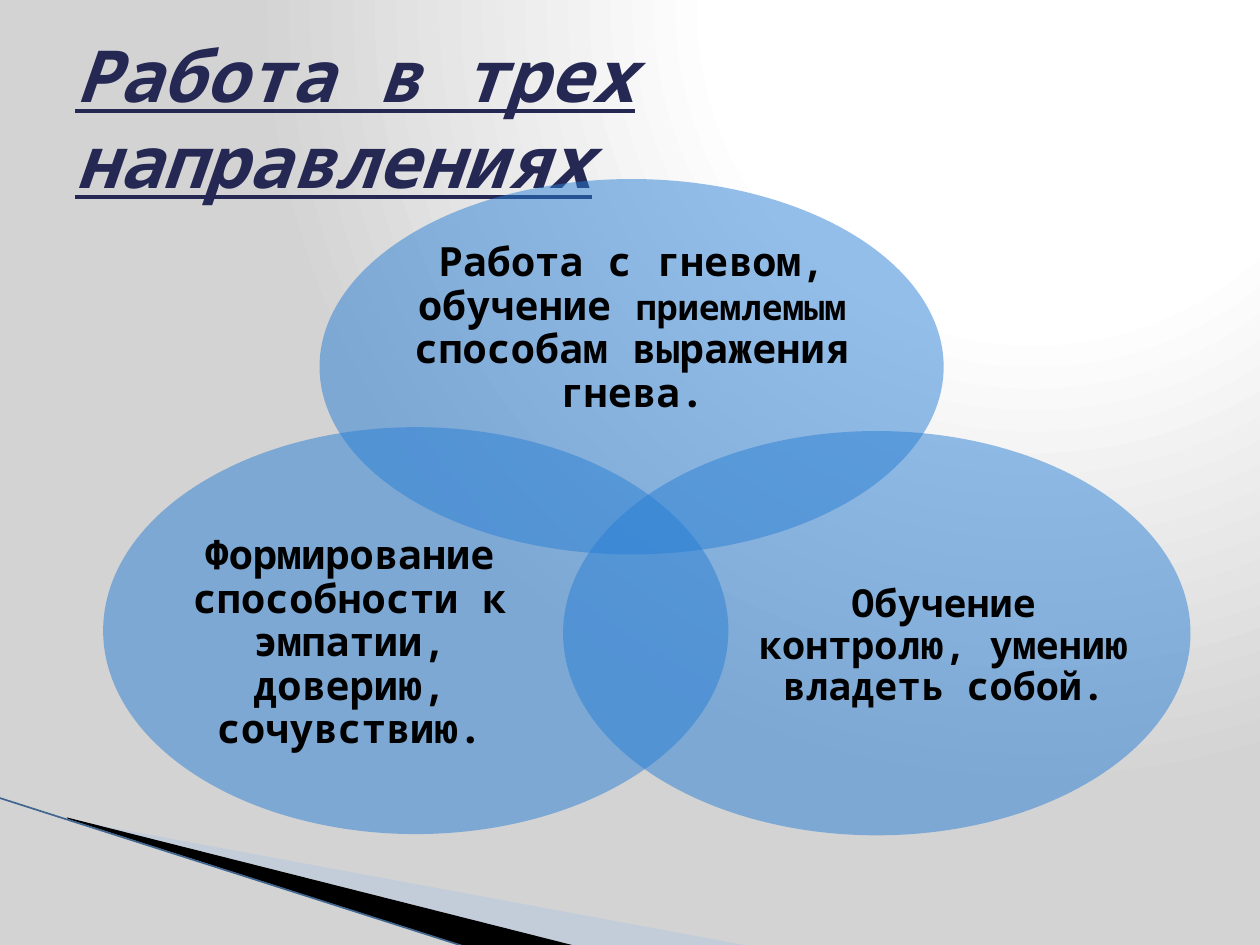
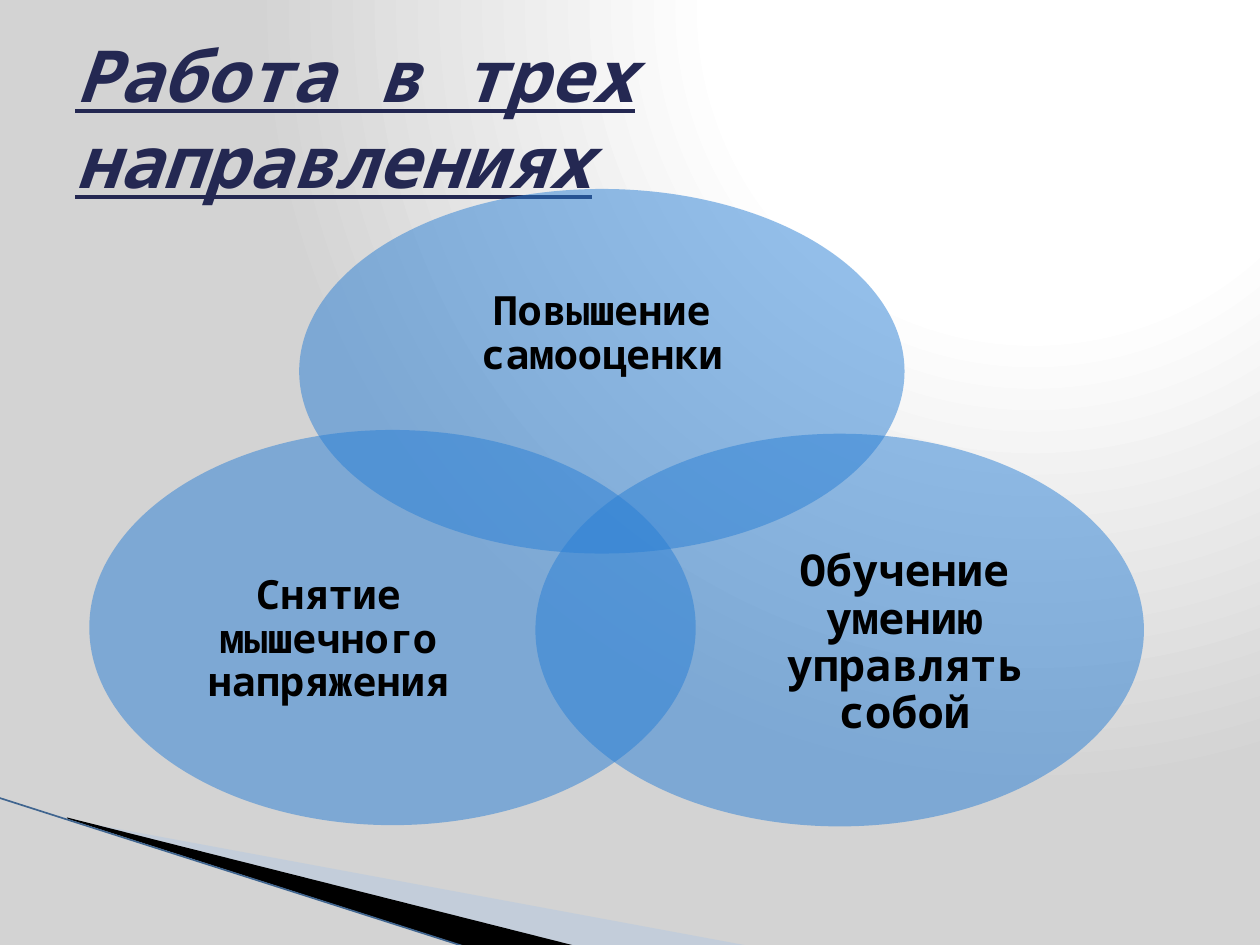
import pptx
import pptx.util
import pptx.dml.color
import pptx.enum.shapes
import pptx.enum.text
import pptx.oxml
import pptx.oxml.ns
import lxml.etree

Cm = pptx.util.Cm
FONT = "Noto Sans Mono"
COLORS = {
    "center": "FFFFFF",
    "edge": "D3D3D3",
    "title": "242852",
    "text": "000000",
    "circle": "297FD5",
    "pale_wedge": "ABC6E6",
    "dark_wedge": "000000",
    "corner_line": "40658F",
}
TITLE = "Работа в трех направлениях"
TITLE_BOX = (1.27, 0.76, 22.86, 3.18)
CORNER_ORIGIN = (-0.03, 16.08)
PALE_WEDGE = [(1.43, 0.45), (15.14, 2.99), (11.61, 2.99), (1.43, 0.43)]
DARK_WEDGE = [(1.38, 0.4), (11.64, 2.99), (9.48, 3.02), (1.4, 0.43)]
CORNER_LINE_END = (9.45, 3.02)

# Each pair is a circle and its label, in percent of the diagram box.
VENN_PARTS = [
    ((19.9, 0, 57.4, 57.2), (27.6, 10, 42.1, 25.7)),
    ((42.3, 38.4, 57.7, 61.6), (60, 54.3, 34.6, 34)),
    ((0, 37.8, 57.5, 62), (5.45, 53.7, 34.5, 34.2)),
]
SLIDES = [
    ((2.08, 3.61, 21.92, 13.23), [
        [("Работа с гневом, обучение ", 23), ("приемлемым", 20),
         (" способам выражения гнева.", 23)],
        [("Обучение контролю, умению владеть собой.", 22)],
        [("Формирование способности к эмпатии, доверию, сочувствию.", 23)],
    ]),
    ((1.8, 3.81, 21.26, 12.85), [
        [("Повышение самооценки", 23)],
        [("Обучение умению управлять собой", 25)],
        [("Снятие мышечного напряжения", 23)],
    ]),
]


def rgb(name):
    return pptx.dml.color.RGBColor.from_string(COLORS[name])


def add_child(parent, tag, **attributes):
    return lxml.etree.SubElement(parent, pptx.oxml.ns.qn(tag), **attributes)


def add_text(shapes, box, runs, color, align=None, inset=None, spacing=None,
             italic=False, underline=False):
    shape = shapes.add_textbox(*map(Cm, box))
    frame = shape.text_frame
    frame.word_wrap = True
    frame.vertical_anchor = pptx.enum.text.MSO_ANCHOR.MIDDLE
    if inset is not None:
        frame.margin_left = frame.margin_right = Cm(inset)
        frame.margin_top = frame.margin_bottom = Cm(inset)
    paragraph = frame.paragraphs[0]
    paragraph.alignment = align
    paragraph.line_spacing = spacing
    for text, size in runs:
        run = paragraph.add_run()
        run.text = text
        run.font.name = FONT
        run.font.size = pptx.util.Pt(size)
        run.font.bold = True
        run.font.italic = italic
        run.font.underline = underline
        run.font.color.rgb = rgb(color)
    return shape


def style_fill(shape, color, opacity=100):
    shape.shadow.inherit = False
    shape.fill.solid()
    shape.fill.fore_color.rgb = rgb(color)
    shape.line.fill.background()
    if opacity < 100:
        fill_color = shape.element.spPr.find(".//" + pptx.oxml.ns.qn("a:srgbClr"))
        add_child(fill_color, "a:alpha", val=str(opacity * 1000))


def paint_background(slide):
    slide.background.fill.gradient()
    gradient = slide.element.xpath(".//p:bgPr/a:gradFill")[0]
    for child in list(gradient):
        gradient.remove(child)
    stops = add_child(gradient, "a:gsLst")
    for percent, color in ((0, "center"), (40, "center"), (100, "edge")):
        stop = add_child(stops, "a:gs", pos=str(percent * 1000))
        add_child(stop, "a:srgbClr", val=COLORS[color])
    focus = add_child(gradient, "a:path", path="circle")
    add_child(focus, "a:fillToRect", l="65000", t="0", r="0", b="98000")


def add_wedge(slide, origin, points, color, opacity=100):
    left, top = origin
    corners = [(Cm(left + x), Cm(top + y)) for x, y in points]
    builder = slide.shapes.build_freeform(*corners[0])
    builder.add_line_segments(corners[1:], close=True)
    style_fill(builder.convert_to_shape(), color, opacity)


def add_corner(slide, origin):
    add_wedge(slide, origin, PALE_WEDGE, "pale_wedge", 40)
    add_wedge(slide, origin, DARK_WEDGE, "dark_wedge")
    left, top = origin
    width, height = CORNER_LINE_END
    line = slide.shapes.add_connector(
        pptx.enum.shapes.MSO_CONNECTOR.STRAIGHT,
        Cm(left), Cm(top), Cm(left + width), Cm(top + height))
    line.line.color.rgb = rgb("corner_line")
    line.line.width = pptx.util.Pt(0.95)
    add_child(line.element.spPr, "a:effectLst")


def place(box, percents):
    left, top, width, height = box
    x, y, part_width, part_height = (percent / 100 for percent in percents)
    return (left + x * width, top + y * height,
            part_width * width, part_height * height)


def add_venn(slide, box, labels):
    group = slide.shapes.add_group_shape()
    for (circle_part, label_part), runs in zip(VENN_PARTS, labels):
        circle = group.shapes.add_shape(
            pptx.enum.shapes.MSO_SHAPE.OVAL, *map(Cm, place(box, circle_part)))
        style_fill(circle, "circle", 50)
        add_text(group.shapes, place(box, label_part), runs, "text",
                 align=pptx.enum.text.PP_ALIGN.CENTER, inset=0, spacing=0.9)


def add_directions_slide(presentation, venn_box, labels):
    slide = presentation.slides.add_slide(presentation.slide_layouts[6])
    paint_background(slide)
    add_corner(slide, CORNER_ORIGIN)
    add_text(slide.shapes, TITLE_BOX, [(TITLE, 41)], "title",
             italic=True, underline=True)
    add_venn(slide, venn_box, labels)


def main():
    presentation = pptx.Presentation()
    presentation.slide_width = Cm(25.4)
    presentation.slide_height = Cm(19.05)
    for venn_box, labels in SLIDES:
        add_directions_slide(presentation, venn_box, labels)
    presentation.save("out.pptx")


if __name__ == "__main__":
    main()
